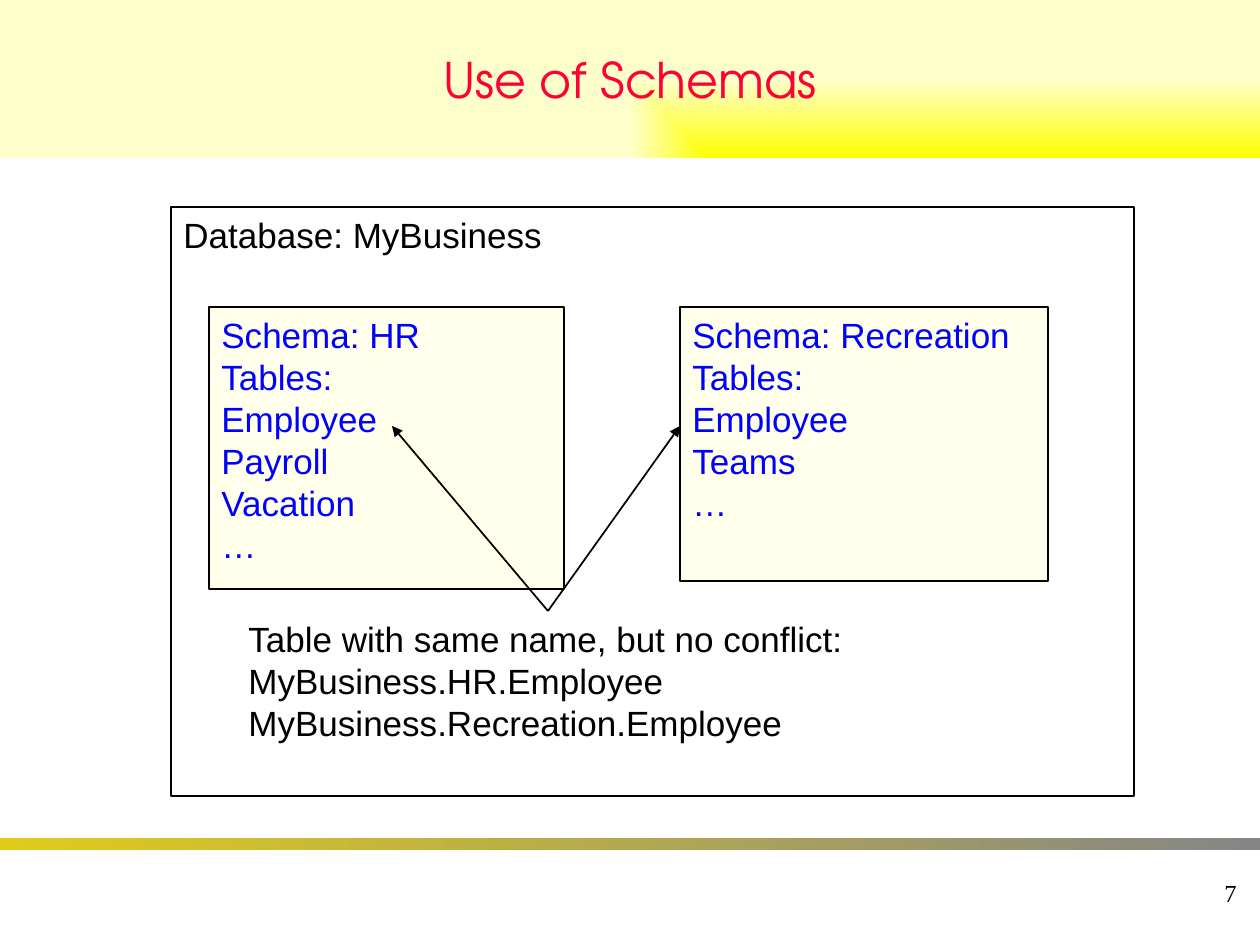
from pptx import Presentation
from pptx.dml.color import RGBColor
from pptx.enum.shapes import MSO_CONNECTOR, MSO_SHAPE
from pptx.enum.text import MSO_ANCHOR, PP_ALIGN
from pptx.oxml import parse_xml
from pptx.oxml.ns import nsdecls, qn
from pptx.util import Emu, Pt

RECT, STRAIGHT = MSO_SHAPE.RECTANGLE, MSO_CONNECTOR.STRAIGHT
TOP, MIDDLE = MSO_ANCHOR.TOP, MSO_ANCHOR.MIDDLE
LEFT, CENTER, RIGHT = PP_ALIGN.LEFT, PP_ALIGN.CENTER, PP_ALIGN.RIGHT

# Content: places are left, top, width, height in px
TITLE = ("Use of Schemas", (0, 0, 1260, 158))
FOOTER_BAR = (0, 838, 1260, 12)
PAGE = ("7", (987, 861, 262, 63))
DATABASE = (["Database: MyBusiness"], (171, 207, 963, 589))
SCHEMAS = [
    (["Schema: HR", "Tables:", "Employee", "Payroll", "Vacation", "…"],
     (209, 307, 355, 282)),
    (["Schema: Recreation", "Tables:", "Employee", "Teams", "…"],
     (680, 307, 368, 274)),
]
NOTE = (["Table with same name, but no conflict:", "MyBusiness.HR.Employee",
         "MyBusiness.Recreation.Employee"], (236, 611, 624, 140))
ARROW_START = (548, 611)
ARROW_ENDS = [(392, 426), (680, 426)]

# Theme: text styles are font, size, colour
THEME = {
    "title": ("TeX Gyre Adventor", 28, "FF0033"),
    "body": ("Arial", 20, "000000"),
    "schema": ("Arial", 20, "0000FF"),
    "page": ("Times New Roman", 14, "000000"),
    "box": "FFFFEB",
    "line": "000000",
    "banner": ("FFFF00", "FFFFCC"),
    "bar": ("E0CB1B", "868686"),
}


def px(*values):
    return [Emu(round(v * 914400 / 126)) for v in values]


def rgb(name):
    return RGBColor.from_string(name)


def write(sp, lines, style, align=LEFT, anchor=TOP, wrap=True):
    font, size, color = THEME[style]
    tf = sp.text_frame
    tf.word_wrap, tf.vertical_anchor = wrap, anchor
    for i, line in enumerate(lines):
        p = tf.paragraphs[0] if i == 0 else tf.add_paragraph()
        p.alignment = align
        r = p.add_run()
        r.text = line
        r.font.name, r.font.size = font, Pt(size)
        r.font.color.rgb = rgb(color)


def add_box(slide, place, fill=None, line=None):
    sp = slide.shapes.add_shape(RECT, *px(*place))
    sp.shadow.inherit = False
    if fill:
        sp.fill.solid()
        sp.fill.fore_color.rgb = rgb(fill)
    else:
        sp.fill.background()
    if line:
        sp.line.color.rgb, sp.line.width = rgb(line), Pt(1)
    else:
        sp.line.fill.background()
    return sp


def add_gradient(sp, colors):
    sp.fill.gradient()
    sp.fill.gradient_angle = 0
    for stop, color in zip(sp.fill.gradient_stops, colors):
        stop.color.rgb = rgb(color)


def add_arrow(slide, start, end):
    cx = slide.shapes.add_connector(STRAIGHT, *px(*start, *end))
    cx.line.color.rgb, cx.line.width = rgb(THEME["line"]), Pt(1)
    cx.line._get_or_add_ln().append(
        parse_xml(f'<a:tailEnd {nsdecls("a")} type="triangle"/>'))
    cx._element.spPr.append(parse_xml(f'<a:effectLst {nsdecls("a")}/>'))


def main():
    prs = Presentation()
    prs.slide_width, prs.slide_height = px(1260, 945)
    slide = prs.slides.add_slide(prs.slide_layouts[6])

    # Footer bar and title banner, its gradient starting at the lower right
    add_gradient(add_box(slide, FOOTER_BAR), THEME["bar"])
    text, place = TITLE
    banner = add_box(slide, place)
    add_gradient(banner, THEME["banner"])
    lin = next(banner._element.spPr.iter(qn("a:lin")))
    lin.getparent().replace(lin, parse_xml(
        f'<a:path {nsdecls("a")} path="rect">'
        '<a:fillToRect l="100000" t="100000"/></a:path>'))
    write(banner, [text], "title", CENTER, MIDDLE)

    # Page number
    text, place = PAGE
    write(slide.shapes.add_textbox(*px(*place)), [text], "page", RIGHT, MIDDLE)

    # Database with its schemas
    lines, place = DATABASE
    write(add_box(slide, place, line=THEME["line"]), lines, "body")
    for lines, place in SCHEMAS:
        write(add_box(slide, place, THEME["box"], THEME["line"]), lines, "schema")

    # Note and arrows to the tables of the same name
    lines, place = NOTE
    write(slide.shapes.add_textbox(*px(*place)), lines, "body", wrap=False)
    for end in ARROW_ENDS:
        add_arrow(slide, ARROW_START, end)

    prs.save("out.pptx")


if __name__ == "__main__":
    main()
